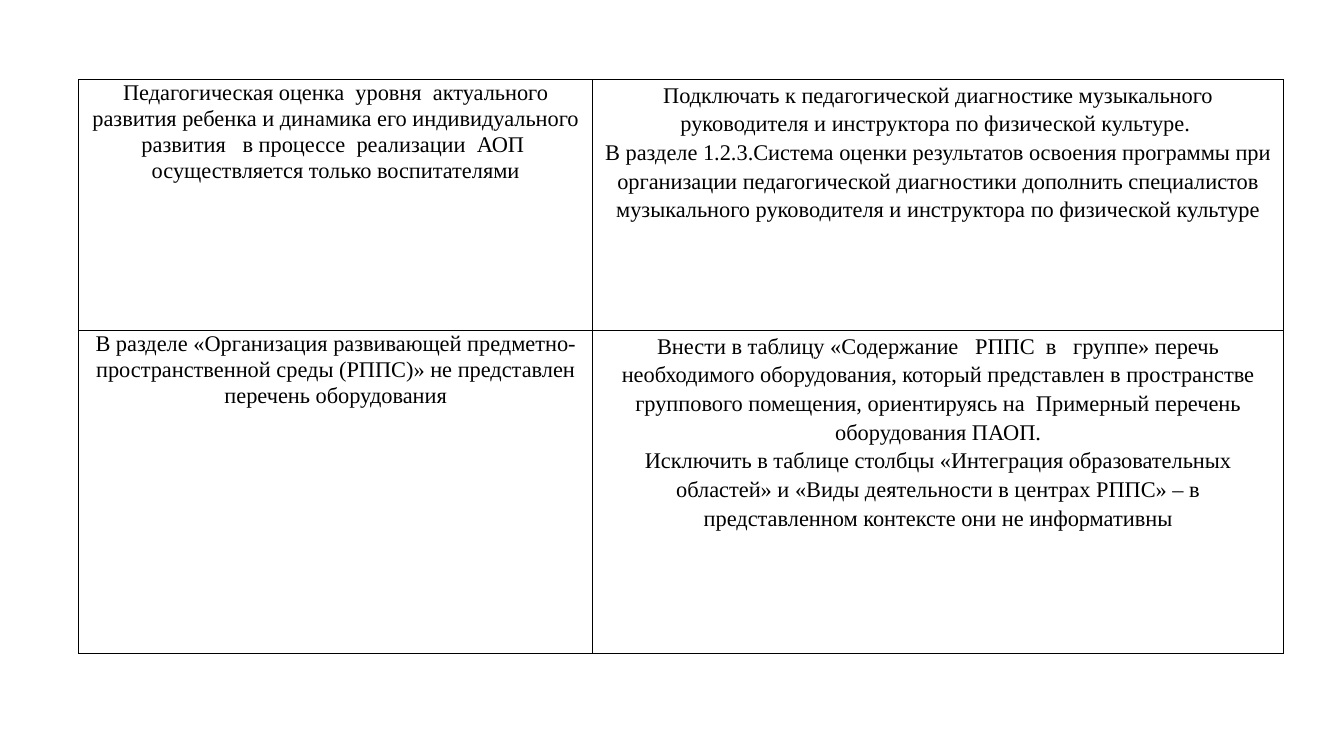
from lxml.etree import SubElement
from pptx import Presentation
from pptx.dml.color import RGBColor
from pptx.enum.text import PP_ALIGN
from pptx.oxml.ns import qn
from pptx.util import Inches, Pt

FONT = "Times New Roman"
INK = "000000"
COLUMN_WIDTHS = (5.1, 6.85)
ROW_HEIGHTS = (2.49, 3.2)
LINE_SPACINGS = (1.04, 1.15)

REMARKS = [
    (
        ["Педагогическая оценка  уровня  актуального развития ребенка и динамика его "
         "индивидуального развития   в процессе  реализации  АОП  осуществляется только "
         "воспитателями"],
        ["Подключать к педагогической диагностике музыкального руководителя и "
         "инструктора по физической культуре. ",
         "В разделе 1.2.3.Система оценки результатов освоения программы при организации "
         "педагогической диагностики дополнить специалистов музыкального руководителя и "
         "инструктора по физической культуре"],
    ),
    (
        ["В разделе «Организация развивающей предметно-пространственной среды (РППС)» "
         "не представлен перечень оборудования"],
        ["Внести в таблицу «Содержание   РППС  в   группе» перечь необходимого "
         "оборудования, который представлен в пространстве группового помещения, "
         "ориентируясь на  Примерный перечень оборудования ПАОП.",
         "Исключить в таблице столбцы «Интеграция образовательных областей» и «Виды "
         "деятельности в центрах РППС» – в представленном контексте они не информативны"],
    ),
]


def color(value):
    return RGBColor.from_string(value)


def add_borders(cell):
    properties = cell._tc.get_or_add_tcPr()
    for side in ("a:lnL", "a:lnR", "a:lnT", "a:lnB"):
        border = SubElement(properties, qn(side), w=str(Pt(1)))
        fill = SubElement(border, qn("a:solidFill"))
        SubElement(fill, qn("a:srgbClr"), val=INK)


def fill_cell(cell, remarks, line_spacing):
    add_borders(cell)
    cell.fill.background()
    cell.margin_left = cell.margin_right = Inches(0.04)
    cell.margin_top = cell.margin_bottom = 0
    frame = cell.text_frame
    for index, remark in enumerate(remarks):
        paragraph = frame.add_paragraph() if index else frame.paragraphs[0]
        paragraph.alignment = PP_ALIGN.CENTER
        paragraph.line_spacing = line_spacing
        run = paragraph.add_run()
        run.text = remark
        run.font.name = FONT
        run.font.size = Pt(16)
        run.font.bold = False
        run.font.color.rgb = color(INK)


presentation = Presentation()
presentation.slide_width = Inches(13.33)
presentation.slide_height = Inches(7.5)
slide = presentation.slides.add_slide(presentation.slide_layouts[6])

table = slide.shapes.add_table(
    len(ROW_HEIGHTS), len(COLUMN_WIDTHS), Inches(0.78), Inches(0.79),
    Inches(sum(COLUMN_WIDTHS)), Inches(sum(ROW_HEIGHTS))).table
table.first_row = False
table.horz_banding = False

for column, width in zip(table.columns, COLUMN_WIDTHS):
    column.width = Inches(width)
for row, height, remarks_row in zip(table.rows, ROW_HEIGHTS, REMARKS):
    row.height = Inches(height)
    for cell, remarks, line_spacing in zip(row.cells, remarks_row, LINE_SPACINGS):
        fill_cell(cell, remarks, line_spacing)

presentation.save("out.pptx")
